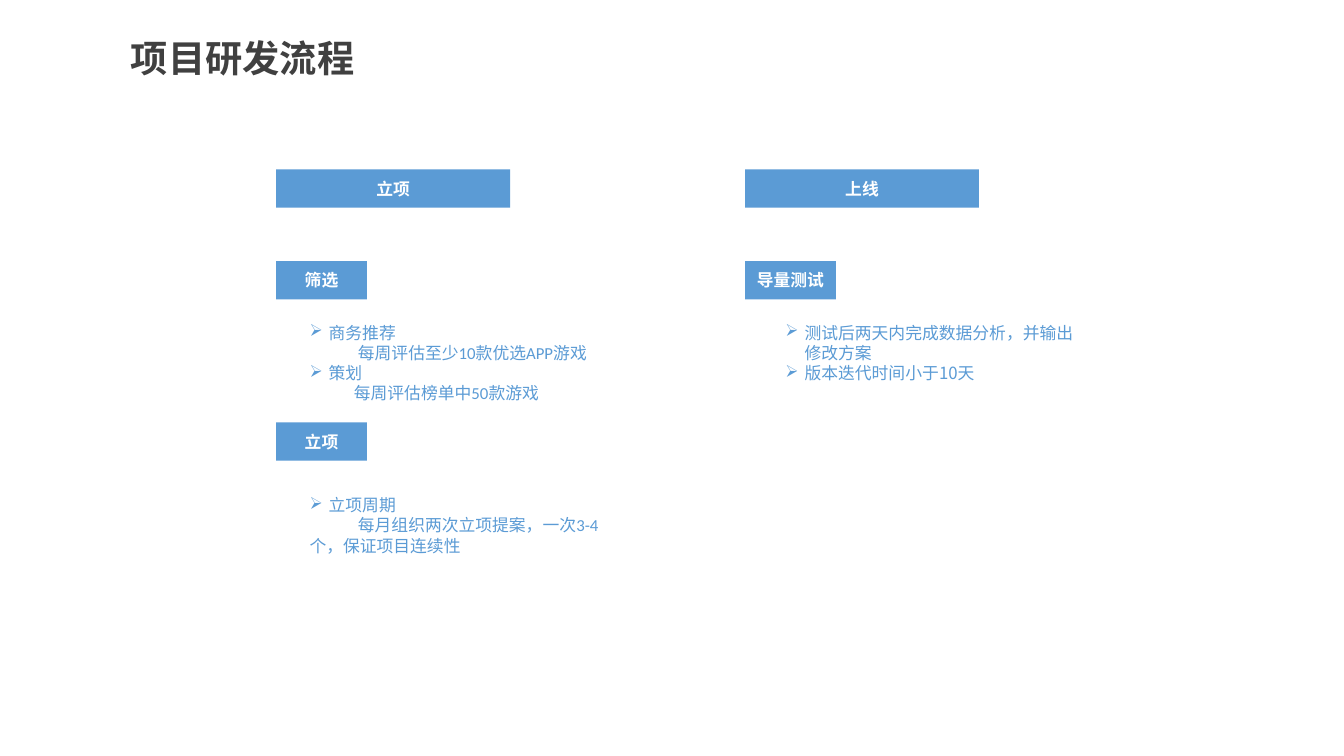
from dataclasses import dataclass

from lxml import etree
from pptx import Presentation
from pptx import util as u
from pptx.dml.color import RGBColor
from pptx.enum import shapes, text
from pptx.oxml.ns import qn

WIDTH, HEIGHT = u.Inches(13.33), u.Inches(7.5)
CJK, LATIN = "Noto Sans CJK SC", "Calibri"
BLUE, WHITE, CHARCOAL = "5B9BD5", "FFFFFF", "404040"
LEFT, RIGHT = 20.55, 55.44
STAGE_ROW, STEP_ROW, SECOND_STEP_ROW = 22.4, 34.53, 55.87
STAGE_WIDTH, STEP_WIDTH, BANNER_HEIGHT = 17.4, 6.75, 5.07
DETAIL_WIDTH, LINE_HEIGHT = 25.66, 2.7


@dataclass(frozen=True)
class Banner:
    label: str
    column: float
    row: float
    width: float


@dataclass(frozen=True)
class Line:
    words: str
    first_indent: float = 0
    bullet: bool = False


@dataclass(frozen=True)
class Detail:
    column: float
    row: float
    line_count: int
    lines: tuple[Line, ...]


BANNERS = (
    Banner("上线", RIGHT, STAGE_ROW, STAGE_WIDTH),
    Banner("立项", LEFT, STAGE_ROW, STAGE_WIDTH),
    Banner("筛选", LEFT, STEP_ROW, STEP_WIDTH),
    Banner("立项", LEFT, SECOND_STEP_ROW, STEP_WIDTH),
    Banner("导量测试", RIGHT, STEP_ROW, STEP_WIDTH),
)

DETAILS = (
    Detail(19.28, 42.67, 4, (
        Line("商务推荐", bullet=True),
        Line("每周评估至少10款优选APP游戏", first_indent=0.48),
        Line("策划", bullet=True),
        Line("每周评估榜单中50款游戏", first_indent=0.44),
    )),
    Detail(19.28, 65.47, 3, (
        Line("立项周期", bullet=True),
        Line("每月组织两次立项提案，一次3-4个，保证项目连续性", first_indent=0.48),
    )),
    Detail(54.69, 42.67, 3, (
        Line("测试后两天内完成数据分析，并输出修改方案", bullet=True),
        Line("版本迭代时间小于10天", bullet=True),
    )),
)


def color(value: str) -> RGBColor:
    return RGBColor.from_string(value)


def place(left: float, top: float, width: float, height: float) -> tuple[int, ...]:
    return tuple(
        round(side * percent / 100)
        for side, percent in zip((WIDTH, HEIGHT, WIDTH, HEIGHT), (left, top, width, height))
    )


def clear_insets(frame) -> None:
    frame.margin_left = frame.margin_right = frame.margin_top = frame.margin_bottom = 0


def write(paragraph, words: str, *, size: float = 12, ink: str = BLUE,
          bold: bool = False, latin: str = CJK) -> None:
    run = paragraph.add_run()
    run.text = words
    run.font.size = u.Pt(size)
    run.font.bold = bold
    run.font.color.rgb = color(ink)
    run.font.name = latin
    etree.SubElement(run.font._element, qn("a:ea"), typeface=CJK)


def indent(paragraph, line: Line) -> None:
    margin, first = (0.69, -0.19) if line.bullet else (0.5, line.first_indent)
    properties = paragraph._p.get_or_add_pPr()
    properties.set("marL", str(u.Inches(margin)))
    properties.set("indent", str(u.Inches(first)))
    if line.bullet:
        etree.SubElement(properties, qn("a:buChar"), char="➢")
    else:
        etree.SubElement(properties, qn("a:buNone"))


def draw_title(slide) -> None:
    frame = slide.shapes.add_textbox(*place(9, 4, 18.15, 7.33)).text_frame
    frame.word_wrap = False
    frame.vertical_anchor = text.MSO_ANCHOR.MIDDLE
    write(frame.paragraphs[0], "项目研发流程", size=26.6, ink=CHARCOAL, bold=True)


def draw_banner(slide, banner: Banner) -> None:
    box = slide.shapes.add_shape(
        shapes.MSO_SHAPE.RECTANGLE,
        *place(banner.column, banner.row, banner.width, BANNER_HEIGHT),
    )
    box.shadow.inherit = False
    box.fill.solid()
    box.fill.fore_color.rgb = color(BLUE)
    box.line.fill.background()
    frame = box.text_frame
    clear_insets(frame)
    frame.vertical_anchor = text.MSO_ANCHOR.MIDDLE
    frame.paragraphs[0].alignment = text.PP_ALIGN.CENTER
    write(frame.paragraphs[0], banner.label, ink=WHITE, bold=True)


def draw_detail(slide, detail: Detail) -> None:
    frame = slide.shapes.add_textbox(
        *place(detail.column, detail.row, DETAIL_WIDTH, LINE_HEIGHT * detail.line_count)
    ).text_frame
    frame.word_wrap = True
    clear_insets(frame)
    for number, line in enumerate(detail.lines):
        paragraph = frame.add_paragraph() if number else frame.paragraphs[0]
        paragraph.level = 1
        paragraph.line_spacing = u.Pt(14.4)
        indent(paragraph, line)
        write(paragraph, line.words, latin=CJK if line.bullet else LATIN)


def main() -> None:
    deck = Presentation()
    deck.slide_width, deck.slide_height = WIDTH, HEIGHT
    slide = deck.slides.add_slide(deck.slide_layouts[6])
    draw_title(slide)
    for banner in BANNERS:
        draw_banner(slide, banner)
    for detail in DETAILS:
        draw_detail(slide, detail)
    deck.save("out.pptx")


if __name__ == "__main__":
    main()
